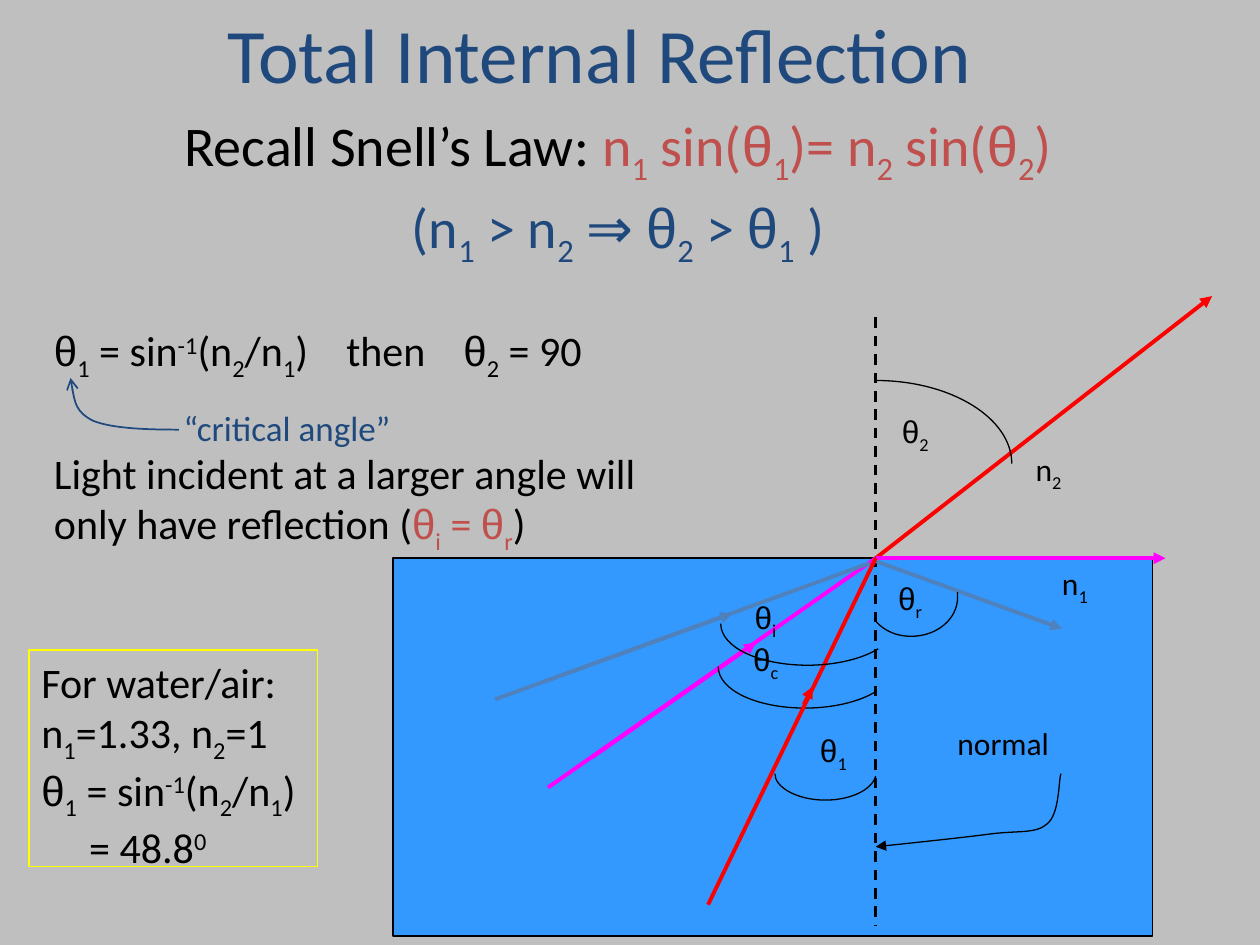
from itertools import chain, groupby

from lxml import etree
from pptx import Presentation
from pptx.dml.color import RGBColor
from pptx.enum import dml, shapes, text
from pptx.oxml.ns import qn
from pptx.util import Inches, Pt

GREY = RGBColor(0xBF, 0xBF, 0xBF)
BLACK = RGBColor(0, 0, 0)
NAVY = RGBColor(0x1F, 0x49, 0x7D)
BRICK = RGBColor(0xC0, 0x50, 0x4D)
WATER = RGBColor(0x33, 0x99, 0xFF)
RED = RGBColor(0xFF, 0, 0)
MAGENTA = RGBColor(0xFF, 0, 0xFF)
STEEL = RGBColor(0x4F, 0x81, 0xBD)
YELLOW = RGBColor(0xFF, 0xFF, 0)

BASELINES = {"_": "-25000", "^": "30000"}
HIT = (6.95, 4.43)  # where the rays meet the surface
CENTRED = {"alignment": text.PP_ALIGN.CENTER}


def set_format(obj, values):
    for name, value in values.items():
        setattr(obj, name, value)


def style_line(line, color, width, dash=None, head=None):
    line.color.rgb = color
    set_format(line, {"width": Pt(width), "dash_style": dash})
    if head:
        ln = line._get_or_add_ln()
        etree.SubElement(ln, qn("a:tailEnd"), type=head)


def add_run(p, content, size, color, script=None):
    """Add runs in Calibri, with each theta in Arial."""
    for is_theta, chars in groupby(content, lambda ch: ch == "θ"):
        r = p.add_run()
        r.text = "".join(chars)
        set_format(r.font, {"name": "Arial" if is_theta else "Calibri", "size": Pt(size)})
        r.font.color.rgb = color
        if script:
            r._r.get_or_add_rPr().set("baseline", BASELINES[script])


def write(sp, paragraphs, size, fmt=None, wrap=True):
    """Fill sp; a paragraph is a list of (text, color), with {_x} low and {^x} raised."""
    tf = sp.text_frame
    set_format(tf, {"word_wrap": wrap, "vertical_anchor": text.MSO_ANCHOR.TOP,
                    "auto_size": text.MSO_AUTO_SIZE.SHAPE_TO_FIT_TEXT})
    for i, parts in enumerate(paragraphs):
        p = tf.add_paragraph() if i else tf.paragraphs[0]
        set_format(p, {"alignment": text.PP_ALIGN.LEFT, **(fmt or {})})
        for content, color in parts:
            for piece in content.split("}"):
                plain, _, script = piece.partition("{")
                add_run(p, plain, size, color)
                if script:
                    add_run(p, script[1:], size, color, script[0])


def add_text(s, box, paragraphs, size, fmt=None, wrap=True):
    sp = s.shapes.add_textbox(*map(Inches, box))
    write(sp, paragraphs, size, fmt, wrap)
    return sp


def add_label(s, x, y, content, width=1.07):
    add_text(s, (x, y, width, 0.5), [[(content, BLACK)]], 18)


def add_rect(s, box, line_color, fill=None):
    sp = s.shapes.add_shape(shapes.MSO_SHAPE.RECTANGLE, *map(Inches, box))
    sp.shadow.inherit = False
    if fill is None:
        sp.fill.background()
    else:
        sp.fill.solid()
        sp.fill.fore_color.rgb = fill
    style_line(sp.line, line_color, 0.75)
    return sp


def add_ray(s, start, end, color, width=2.25, dash=None, head=None):
    ray = s.shapes.add_connector(shapes.MSO_CONNECTOR.STRAIGHT, *map(Inches, start + end))
    style_line(ray.line, color, width, dash, head)
    etree.SubElement(ray._element.spPr, qn("a:effectLst"))


def add_curve(s, start, segments, color=BLACK, width=0.75, head=None):
    """Draw cubic Bezier segments, each given as two controls and an end."""
    points = [tuple(map(Inches, point)) for point in chain.from_iterable(segments)]
    builder = s.shapes.build_freeform(*map(Inches, start))
    builder.add_line_segments(points, close=False)
    sp = builder.convert_to_shape()
    corners = list(sp._element.iter(qn("a:lnTo")))
    for first in range(0, len(corners), 3):
        bezier = etree.Element(qn("a:cubicBezTo"))
        corners[first].addprevious(bezier)
        for corner in corners[first:first + 3]:
            bezier.append(corner[0])
            corner.getparent().remove(corner)
    sp.shadow.inherit = False
    sp.fill.background()
    style_line(sp.line, color, width, head=head)


def add_wide_arc(s, x, y):
    """Arc from the normal round to an incident ray, ending at x, y."""
    add_curve(s, (x + 1.25, y + 0.2), [
        ((x + 1.12, y + 0.28), (x + 0.91, y + 0.33), (x + 0.69, y + 0.33)),
        ((x + 0.31, y + 0.33), (x, y + 0.19), (x, y))])


def add_tabs(p, positions):
    tabs = etree.SubElement(p._p.get_or_add_pPr(), qn("a:tabLst"))
    for pos in positions:
        etree.SubElement(tabs, qn("a:tab"), pos=str(Inches(pos)), algn="l")


def add_diagram(s):
    add_rect(s, (3.12, 4.43, 6.03, 3), BLACK, WATER)
    add_ray(s, HIT, (9.62, 2.35), RED, head="triangle")
    add_ray(s, (6.95, 2.52), (6.95, 7.35), BLACK, 1.5, dml.MSO_LINE.DASH)
    add_label(s, 7.5, 5.7, "normal", 1.75)
    add_curve(s, (8.42, 6.14), [((8.4, 6.21), (8.41, 6.46), (8.31, 6.54)),
                                ((8.22, 6.62), (8.07, 6.59), (7.85, 6.62)),
                                ((7.62, 6.65), (7.14, 6.7), (6.95, 6.72))], head="triangle")
    add_curve(s, (6.95, 3.02), [((7.55, 3.02), (8.03, 3.32), (8.03, 3.68))])
    add_label(s, 7.06, 3.22, "θ{_2}", 0.64)
    add_curve(s, (6.95, 6.16), [((6.92, 6.27), (6.75, 6.35), (6.55, 6.35)),
                                ((6.33, 6.35), (6.15, 6.25), (6.15, 6.14))])
    add_label(s, 6.41, 5.75, "θ{_1}")
    add_label(s, 8.12, 3.52, "n{_2}", 0.72)
    add_label(s, 8.33, 4.43, "n{_1}", 0.72)

    add_ray(s, (4.35, 6.25), HIT, MAGENTA)
    add_ray(s, (4.7, 6.01), (6, 5.1), MAGENTA, head="triangle")
    add_ray(s, HIT, (9.25, 4.43), MAGENTA, head="triangle")
    add_wide_arc(s, 5.7, 5.29)
    add_label(s, 5.88, 5.03, "θ{_c}")

    add_ray(s, (3.93, 5.55), (6.9, 4.47), STEEL)
    add_ray(s, (4.32, 5.41), (5.81, 4.87), STEEL, head="triangle")
    add_ray(s, (6.94, 4.45), (8.43, 4.99), STEEL, head="triangle")
    add_ray(s, (5.62, 7.18), HIT, RED)
    add_ray(s, (6.38, 5.59), (6.45, 5.45), RED, head="triangle")
    add_wide_arc(s, 5.72, 4.95)
    add_label(s, 5.89, 4.7, "θ{_i}")
    add_curve(s, (7.6, 4.7), [((7.6, 4.71), (7.6, 4.72), (7.6, 4.74)),
                              ((7.6, 4.91), (7.44, 5.05), (7.23, 5.05)),
                              ((7.12, 5.05), (7.02, 5.01), (6.95, 4.93))])
    add_label(s, 7.03, 4.55, "θ{_r}")


def add_explanation(s):
    add_text(s, (1.05, 0, 7.42, 0.83), [[("Total Internal Reflection", NAVY)]], 44, CENTRED)
    add_text(s, (0.42, 0.83, 8.97, 1.22), [
        [("Recall Snell’s Law: ", BLACK), ("n{_1} sin(θ{_1})= n{_2} sin(θ{_2})", BRICK)],
        [("(n{_1} > n{_2} ⇒ θ{_2} > θ{_1} )", NAVY)],
    ], 32, {**CENTRED, "space_before": Pt(3.2)})
    critical = add_text(s, (0.33, 2.53, 5.39, 0.5), [
        [("θ{_1} = sin{^-1}(n{_2}/n{_1})\tthen\tθ{_2} = 90", BLACK)]], 24)
    add_tabs(critical.text_frame.paragraphs[0], (2.32, 3.25))
    add_text(s, (0.33, 3.5, 5.39, 0.91), [
        [("Light incident at a larger angle will only have reflection (", BLACK),
         ("θ{_i} = θ{_r}", BRICK), (")", BLACK)]], 24)
    add_text(s, (1.36, 3.18, 2.21, 0.43), [[("“critical angle”", NAVY)]], 20, wrap=False)
    add_curve(s, (1.42, 3.41), [((1.15, 3.41), (0.89, 3.4), (0.74, 3.34)),
                                ((0.6, 3.27), (0.58, 3.13), (0.56, 3))], NAVY, 1, "arrow")
    example = add_rect(s, (0.23, 5.16, 2.29, 1.72), YELLOW)
    lines = ("For water/air:", "n{_1}=1.33, n{_2}=1", "θ{_1} = sin{^-1}(n{_2}/n{_1})", "= 48.8{^0}")
    write(example, [[(line, BLACK)] for line in lines], 24, wrap=False)
    result = example.text_frame.paragraphs[-1]
    result._p.get_or_add_pPr().set("marL", str(Inches(0.38)))


def main():
    prs = Presentation()
    set_format(prs, {"slide_width": Inches(10), "slide_height": Inches(7.5)})
    s = prs.slides.add_slide(prs.slide_layouts[6])
    s.background.fill.solid()
    s.background.fill.fore_color.rgb = GREY
    add_diagram(s)
    add_explanation(s)
    prs.save("out.pptx")


if __name__ == "__main__":
    main()
